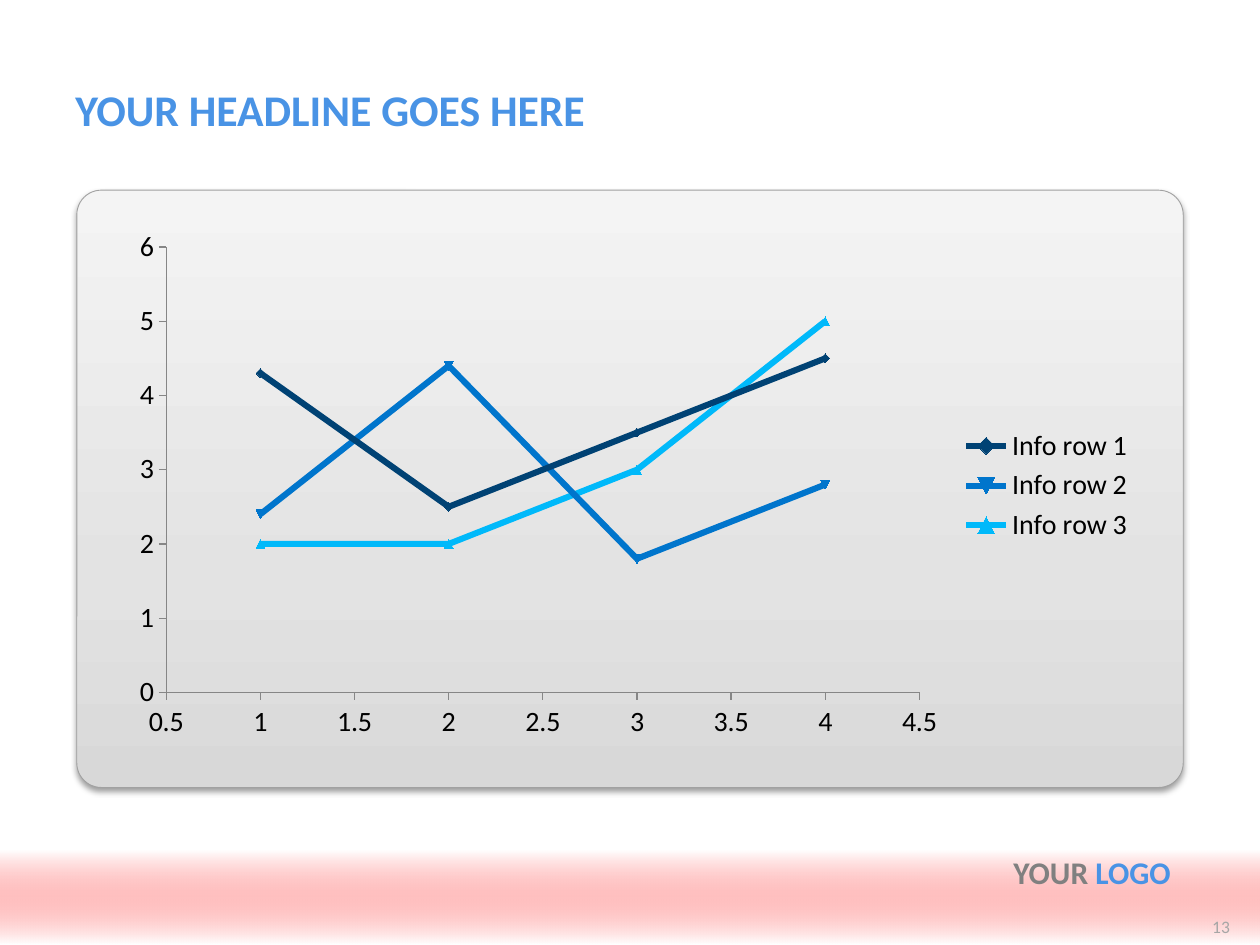
from lxml.etree import SubElement
from pptx import Presentation
from pptx.chart.data import XyChartData
from pptx.dml.color import RGBColor
from pptx.enum.chart import XL_CHART_TYPE as ChartType, XL_LEGEND_POSITION as LegendPosition
from pptx.enum.chart import XL_TICK_MARK as TickMark
from pptx.enum.shapes import MSO_SHAPE as Shape
from pptx.enum.text import MSO_ANCHOR as Anchor, PP_ALIGN as Align
from pptx.oxml import parse_xml
from pptx.oxml.ns import qn
from pptx.util import Pt

FONT = "Calibri"
BLUE, GREY, PALE = "4993E5", "808080", "A6A6A6"
AXIS_GREY = "868686"

# Gradient stops: position in percent, colour, opacity in percent
PANEL = dict(kind=Shape.ROUNDED_RECTANGLE, place=(43.9, 108.7, 632.2, 341.3), angle=90,
             stops=[(0, "D8D8D8", 100), (35, "E3E3E3", 100), (100, "F4F4F4", 100)])
BAND = dict(kind=Shape.RECTANGLE, place=(0, 486, 720, 54), angle=270,
            stops=[(0, "FF0000", 0), (100, "FFFFFF", 100)])

# Place, size, bold, alignment, anchor, spans of (text, colour)
TEXTS = [
    ((36, 42.5, 648, 39.6), 25, True, Align.LEFT, Anchor.MIDDLE,
     [("YOUR HEADLINE GOES HERE", BLUE)]),
    ((36, 483.8, 640.1, 39.6), 18, True, Align.RIGHT, Anchor.TOP,
     [("YOUR", GREY), (" LOGO", BLUE)]),
    ((676.1, 518.4, 33.8, 21.6), 10, False, Align.RIGHT, Anchor.MIDDLE, [("13", PALE)]),
]

CHART_PLACE = (65.5, 126, 589.7, 303.1)
PLOT_AREA = dict(x=0.05, y=0.05, w=0.73, h=0.84)
SERIES = [
    ("Info row 1", "004274", [4.3, 2.5, 3.5, 4.5]),
    ("Info row 2", "0075CC", [2.4, 4.4, 1.8, 2.8]),
    ("Info row 3", "00B9FA", [2, 2, 3, 5]),
]
X_SCALE = dict(minimum_scale=0.5, maximum_scale=4.5, major_unit=0.5)
Y_SCALE = dict(minimum_scale=0, maximum_scale=6, major_unit=1)


def color(value):
    return RGBColor.from_string(value)


def points(place):
    return [Pt(length) for length in place]


def set_all(target, values):
    for name, value in values.items():
        setattr(target, name, value)


def set_font(font, size, value="000000", bold=False):
    set_all(font, dict(name=FONT, size=Pt(size), bold=bold))
    font.color.rgb = color(value)


def add_gradient_shape(page, kind, place, angle, stops):
    shape = page.shapes.add_shape(kind, *points(place))
    shape.shadow.inherit = False
    shape.line.fill.background()
    shape.fill.gradient()
    shape.fill.gradient_angle = angle
    stop_list = shape.element.spPr.find(".//" + qn("a:gsLst"))
    for old in list(stop_list):
        stop_list.remove(old)
    for position, value, opacity in stops:
        stop = SubElement(stop_list, qn("a:gs"), pos=str(position * 1000))
        tint = SubElement(stop, qn("a:srgbClr"), val=value)
        if opacity < 100:
            SubElement(tint, qn("a:alpha"), val=str(opacity * 1000))
    return shape


def add_panel(page):
    panel = add_gradient_shape(page, **PANEL)
    panel.adjustments[0] = 0.041
    panel.line.color.rgb = color("A1A1A1")
    panel.line.width = Pt(0.5)
    effects = panel.element.spPr.find(qn("a:effectLst"))
    shadow = SubElement(effects, qn("a:outerShdw"), blurRad=str(Pt(3.5)), dist=str(Pt(2)),
                        dir="5400000", rotWithShape="0")
    tint = SubElement(shadow, qn("a:srgbClr"), val="000000")
    SubElement(tint, qn("a:alpha"), val="38000")


def add_text(page, place, size, bold, align, anchor, spans):
    frame = page.shapes.add_textbox(*points(place)).text_frame
    set_all(frame, dict(word_wrap=True, vertical_anchor=anchor))
    para = frame.paragraphs[0]
    para.alignment = align
    for text, value in spans:
        span = para.add_run()
        span.text = text
        set_font(span.font, size, value, bold)


def set_plot_area(chart):
    """Fix the inner plot area as fractions of the chart."""
    area = chart.element.find(".//" + qn("c:plotArea"))
    for old in area.findall(qn("c:layout")):
        area.remove(old)
    namespace = "http://schemas.openxmlformats.org/drawingml/2006/chart"
    layout = parse_xml(f'<c:layout xmlns:c="{namespace}"/>')
    manual = SubElement(layout, qn("c:manualLayout"))
    settings = dict(layoutTarget="inner", xMode="edge", yMode="edge", **PLOT_AREA)
    for name, value in settings.items():
        SubElement(manual, qn("c:" + name), val=str(value))
    area.insert(0, layout)


def add_line_chart(page):
    data = XyChartData()
    for name, _, values in SERIES:
        row = data.add_series(name)
        for x, y in enumerate(values, start=1):
            row.add_data_point(x, y)
    chart = page.shapes.add_chart(ChartType.XY_SCATTER_LINES, *points(CHART_PLACE), data).chart
    set_font(chart.font, 18)
    set_all(chart, dict(has_title=False, has_legend=True))
    set_all(chart.legend, dict(position=LegendPosition.RIGHT, include_in_layout=False))
    set_font(chart.legend.font, 16)
    chart.plots[0].vary_by_categories = False
    set_plot_area(chart)

    for axis, scale in ((chart.category_axis, X_SCALE), (chart.value_axis, Y_SCALE)):
        set_all(axis, dict(scale, has_major_gridlines=False, major_tick_mark=TickMark.OUTSIDE,
                           minor_tick_mark=TickMark.NONE))
        set_all(axis.tick_labels, dict(number_format="General", number_format_is_linked=False))
        set_font(axis.tick_labels.font, 16)
        axis.format.line.color.rgb = color(AXIS_GREY)
        axis.format.line.width = Pt(0.75)

    for series, (_, value, _) in zip(chart.plots[0].series, SERIES):
        series.smooth = False
        series.format.line.color.rgb = color(value)
        series.format.line.width = Pt(3.5)
        series.marker.format.fill.solid()
        series.marker.format.fill.fore_color.rgb = color(value)
        series.marker.format.line.color.rgb = color(value)


def main():
    deck = Presentation()
    deck.slide_width, deck.slide_height = Pt(720), Pt(540)
    page = deck.slides.add_slide(deck.slide_layouts[6])
    add_panel(page)
    add_gradient_shape(page, **BAND)
    add_line_chart(page)
    for text in TEXTS:
        add_text(page, *text)
    deck.save("out.pptx")


if __name__ == "__main__":
    main()
